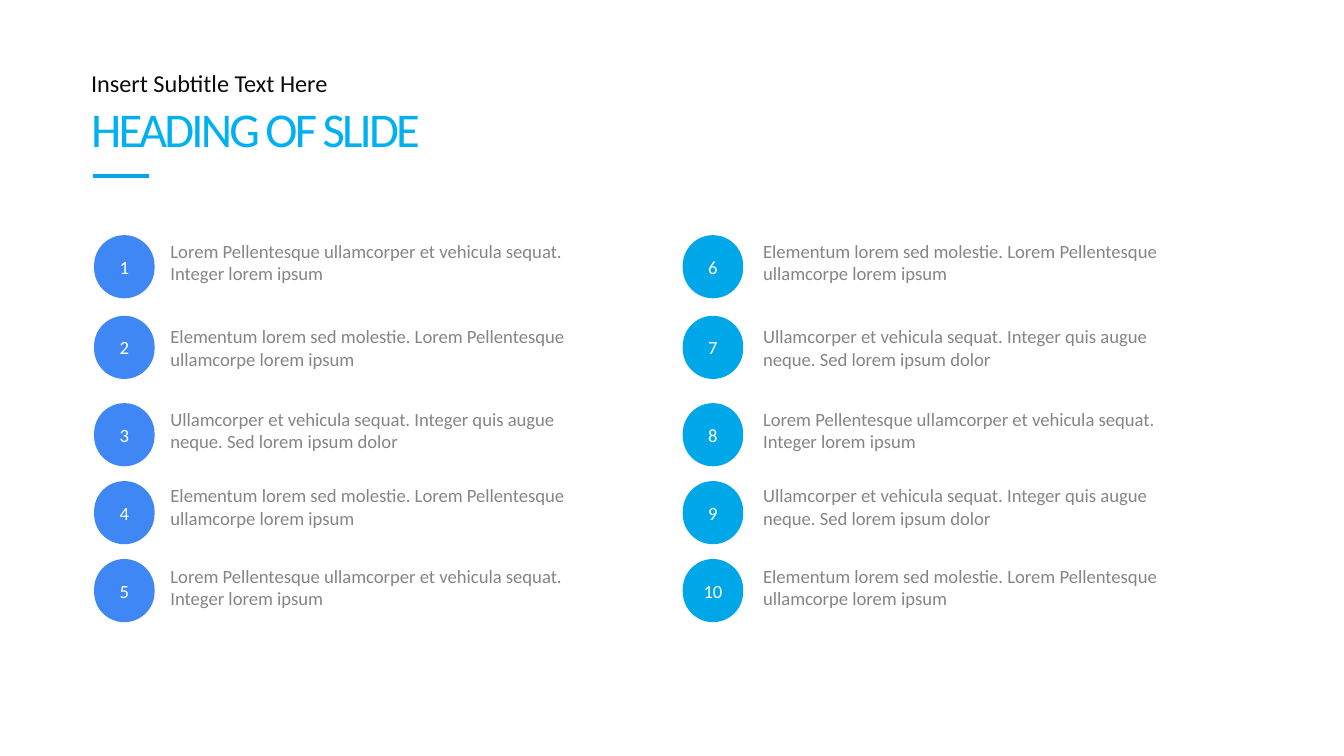
import pptx
import pptx.util
import pptx.dml.color
import pptx.enum.shapes
import pptx.enum.text
import pptx.oxml.ns
import lxml.etree

Pt = pptx.util.Pt
Shape = pptx.enum.shapes.MSO_SHAPE
Anchor = pptx.enum.text.MSO_ANCHOR
Align = pptx.enum.text.PP_ALIGN
qn = pptx.oxml.ns.qn

HUES = {
    "cyan": "00A7E8",
    "sky": "00B0F0",
    "blue": "3F87F4",
    "deep": "0070C0",
    "gray": "858585",
    "ink": "0B0B0B",
    "white": "FFFFFF",
}
FADE = [(0, "cyan"), (45, "sky"), (68, "blue"), (100, "deep")]

INTEGER = "Lorem Pellentesque ullamcorper et vehicula sequat. Integer lorem ipsum"
ELEMENT = "Elementum lorem sed molestie. Lorem Pellentesque ullamcorpe lorem ipsum"
AUGUE = "Ullamcorper et vehicula sequat. Integer quis augue neque. Sed lorem ipsum dolor"

COLUMNS = [
    (50.4, 84.24, "blue", [INTEGER, ELEMENT, AUGUE, ELEMENT, INTEGER]),
    (365.76, 401.76, "cyan", [ELEMENT, AUGUE, INTEGER, AUGUE, ELEMENT]),
]
ROWS = [(126, 124.56), (169.2, 170.3), (216, 214.56), (257.76, 255.6), (299.52, 298.8)]


def color(name):
    return pptx.dml.color.RGBColor.from_string(HUES[name])


def apply(target, values):
    for name, value in values.items():
        setattr(target, name, value)


class Deck:
    face = "Calibri"

    def __init__(self, width, height):
        self.show = pptx.Presentation()
        apply(self.show, {"slide_width": Pt(width), "slide_height": Pt(height)})
        self.slide = self.show.slides.add_slide(self.show.slide_layouts[6])

    def label(self, shape, text, size, hue, frame, align=Align.LEFT):
        apply(shape.text_frame, frame)
        para = shape.text_frame.paragraphs[0]
        para.alignment = align
        run = para.add_run()
        run.text = text
        apply(run.font, {"name": self.face, "size": Pt(size)})
        run.font.color.rgb = color(hue)
        return run

    def text(self, box, text, size, hue, anchor=Anchor.MIDDLE):
        shape = self.slide.shapes.add_textbox(*map(Pt, box))
        frame = {"word_wrap": True, "vertical_anchor": anchor}
        return self.label(shape, text, size, hue, frame)

    def title(self, box, text, size):
        run = self.text(box, text, size, "sky")
        run.font.fill.gradient()
        run.font.fill.gradient_angle = 0
        props = run.font._element
        props.set("spc", "-150")
        stops = props.find(qn("a:gradFill")).find(qn("a:gsLst"))
        for stop in list(stops):
            stops.remove(stop)
        for place, hue in FADE:
            stop = lxml.etree.SubElement(stops, qn("a:gs"), pos=str(place * 1000))
            lxml.etree.SubElement(stop, qn("a:srgbClr"), val=HUES[hue])

    def badge(self, box, text, hue):
        shape = self.slide.shapes.add_shape(Shape.ROUNDED_RECTANGLE, *map(Pt, box))
        shape.adjustments[0] = 0.5
        shape.shadow.inherit = False
        shape.fill.solid()
        shape.fill.fore_color.rgb = color(hue)
        shape.line.fill.background()
        frame = {"word_wrap": False, "vertical_anchor": Anchor.MIDDLE}
        self.label(shape, text, 10, "white", frame, Align.CENTER)

    def rule(self, start, end, hue, width):
        kind = pptx.enum.shapes.MSO_CONNECTOR.STRAIGHT
        line = self.slide.shapes.add_connector(kind, *map(Pt, start + end))
        line.line.color.rgb = color(hue)
        line.line.width = Pt(width)
        lxml.etree.SubElement(line._element.spPr, qn("a:effectLst"))


def main():
    deck = Deck(720, 405)
    deck.rule((49.68, 94.32), (79.92, 94.32), "cyan", 2)
    deck.text((41.76, 33.12, 396, 25.2), "Insert Subtitle Text Here", 13, "ink", Anchor.TOP)
    deck.title((41.76, 34.56, 600, 67.68), "HEADING OF SLIDE", 26)
    for col, (left, edge, hue, notes) in enumerate(COLUMNS):
        for row, ((top, head), note) in enumerate(zip(ROWS, notes)):
            number = col * len(ROWS) + row + 1
            deck.badge((left, top, 32.4, 33.84), str(number), hue)
            deck.text((edge, head, 239.76, 31.68), note, 10, "gray")
    deck.show.save("out.pptx")


if __name__ == "__main__":
    main()
